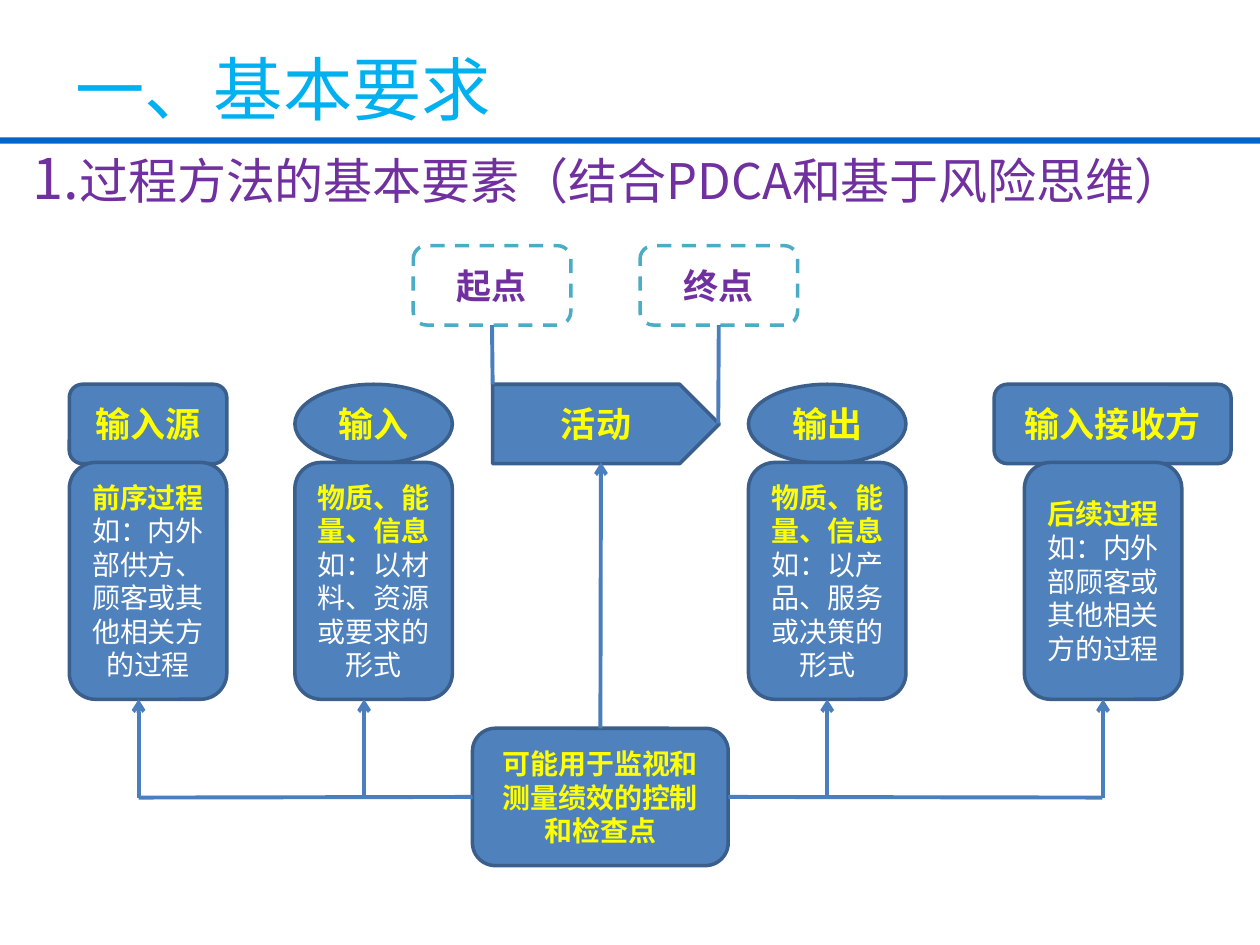
import pptx
import pptx.util
import pptx.oxml
import pptx.oxml.ns
from pptx.dml.color import RGBColor
from pptx.enum.dml import MSO_LINE
from pptx.enum.shapes import MSO_CONNECTOR, MSO_SHAPE
from pptx.enum.text import MSO_ANCHOR, PP_ALIGN
from pptx.util import Inches, Pt

BLUE = RGBColor(0x4F, 0x81, 0xBD)
OUTLINE = RGBColor(0x3A, 0x5F, 0x8C)
CONNECTOR = RGBColor(0x4B, 0x7E, 0xBC)
RULE = RGBColor(0x00, 0x66, 0xCC)
SKY = RGBColor(0x00, 0xB0, 0xF0)
TEAL = RGBColor(0x4B, 0xAC, 0xC6)
PURPLE = RGBColor(0x70, 0x30, 0xA0)
YELLOW = RGBColor(0xFF, 0xFF, 0x00)
WHITE = RGBColor(0xFF, 0xFF, 0xFF)
HEADING_FONT = "Noto Sans CJK JP"
BODY_FONT = "Calibri"

TITLE = "一、基本要求"
SUBTITLE = [("1.", 32), ("过程方法的基本要素（结合PDCA和基于风险思维）", 28)]
STAGES = [
    ("输入源", MSO_SHAPE.ROUNDED_RECTANGLE, 0.55, 1.25),
    ("输入", MSO_SHAPE.OVAL, 2.34, 1.25),
    ("活动", MSO_SHAPE.PENTAGON, 3.91, 1.8),
    ("输出", MSO_SHAPE.OVAL, 5.94, 1.25),
    ("输入接收方", MSO_SHAPE.ROUNDED_RECTANGLE, 7.89, 1.88),
]
LIMITS = [("起点", 3.28), ("终点", 5.08)]
DETAILS = [
    ("前序过程", "如：内外部供方、顾客或其他相关方的过程", 0.55, 1.1),
    ("物质、能量、信息", "如：以材料、资源或要求的形式", 2.34, 2.89),
    ("物质、能量、信息", "如：以产品、服务或决策的形式", 5.94, None),
    ("后续过程", "如：内外部顾客或其他相关方的过程", 8.13, None),
]
CONTROL = "可能用于监视和测量绩效的控制和检查点"

BOX_WIDTH, BOX_HEIGHT = 1.25, 0.63
STAGE_TOP, LIMIT_TOP = 3.05, 1.95
DETAIL_TOP, DETAIL_HEIGHT = 3.67, 1.88
BUS_Y = 6.33

presentation = pptx.Presentation()
presentation.slide_width, presentation.slide_height = Inches(10), Inches(7.5)
slide = presentation.slides.add_slide(presentation.slide_layouts[6])


def add_text(left, top, width, height, runs, color, anchor):
    box = slide.shapes.add_textbox(*map(Inches, (left, top, width, height)))
    frame = box.text_frame
    frame.word_wrap = True
    frame.vertical_anchor = anchor
    paragraph = frame.paragraphs[0]
    for text, size in runs:
        run = paragraph.add_run()
        run.text = text
        run.font.size = Pt(size)
        run.font.name = HEADING_FONT
        run.font.color.rgb = color
    return paragraph


def add_box(kind, left, top, width, height, lines, size,
            fill=BLUE, outline=OUTLINE):
    shape = slide.shapes.add_shape(kind, *map(Inches, (left, top, width, height)))
    shape.shadow.inherit = False
    shape.fill.solid()
    shape.fill.fore_color.rgb = fill
    shape.line.color.rgb = outline
    shape.line.width = Pt(2)
    frame = shape.text_frame
    frame.word_wrap = True
    frame.vertical_anchor = MSO_ANCHOR.MIDDLE
    for index, (text, color, bold) in enumerate(lines):
        paragraph = frame.add_paragraph() if index else frame.paragraphs[0]
        paragraph.text = text
        paragraph.alignment = PP_ALIGN.CENTER
        paragraph.font.size = Pt(size)
        paragraph.font.name = BODY_FONT
        paragraph.font.bold = bold
        paragraph.font.color.rgb = color
    return shape


def add_line(start, end, begin=None, finish=None, arrow=False):
    line = slide.shapes.add_connector(
        MSO_CONNECTOR.STRAIGHT, *map(Inches, (*start, *end)))
    line.line.color.rgb = CONNECTOR
    line.line.width = Pt(2.25)
    if begin:
        line.begin_connect(*begin)
    if finish:
        line.end_connect(*finish)
    if arrow:
        outline = line.line._get_or_add_ln()
        tail = pptx.oxml.parse_xml(
            f'<a:tailEnd {pptx.oxml.ns.nsdecls("a")} type="arrow"/>')
        outline.append(tail)
    line._element.spPr.append(
        pptx.oxml.parse_xml(f'<a:effectLst {pptx.oxml.ns.nsdecls("a")}/>'))


rule = slide.shapes.add_shape(
    MSO_SHAPE.RECTANGLE, 0, Inches(1.09), Inches(10), Inches(0.05))
rule.shadow.inherit = False
rule.fill.solid()
rule.fill.fore_color.rgb = RULE
rule.line.fill.background()

add_text(0.5, 0.3, 9, 0.79, [(TITLE, 39.6)], SKY, MSO_ANCHOR.MIDDLE)
subtitle = add_text(0.16, 1.09, 9.61, 6.25, SUBTITLE, PURPLE, MSO_ANCHOR.TOP)
properties = subtitle._p.get_or_add_pPr()
properties.set("marL", str(Inches(0.38)))
properties.set("indent", str(Inches(-0.38)))

for text, kind, left, width in STAGES:
    add_box(kind, left, STAGE_TOP, width, BOX_HEIGHT, [(text, YELLOW, True)], 20)

limits = []
for text, left in LIMITS:
    limit = add_box(MSO_SHAPE.ROUNDED_RECTANGLE, left, LIMIT_TOP, BOX_WIDTH,
                    BOX_HEIGHT, [(text, PURPLE, True)], 20, WHITE, TEAL)
    limit.line.dash_style = MSO_LINE.DASH
    limits.append(limit)

control = add_box(MSO_SHAPE.ROUNDED_RECTANGLE, 3.75, 5.78, 2.03, 1.09,
                  [(CONTROL, YELLOW, True)], 16)

for heading, example, left, arrow_x in DETAILS:
    detail = add_box(MSO_SHAPE.ROUNDED_RECTANGLE, left, DETAIL_TOP, BOX_WIDTH,
                     DETAIL_HEIGHT,
                     [(heading, YELLOW, True), (example, WHITE, False)], 16)
    x = arrow_x or left + BOX_WIDTH / 2
    add_line((x, BUS_Y), (x, DETAIL_TOP + DETAIL_HEIGHT),
             finish=None if arrow_x else (detail, 2), arrow=True)

for limit, x, y in zip(limits, (3.91, 5.7), (STAGE_TOP, 3.36)):
    add_line((x, y), (x, LIMIT_TOP + BOX_HEIGHT), finish=(limit, 2))
add_line((4.77, 5.78), (4.77, DETAIL_TOP), begin=(control, 0), arrow=True)
add_line((1.1, BUS_Y), (3.75, BUS_Y), finish=(control, 1))
add_line((5.78, BUS_Y), (8.75, BUS_Y), begin=(control, 3))

presentation.save("out.pptx")
